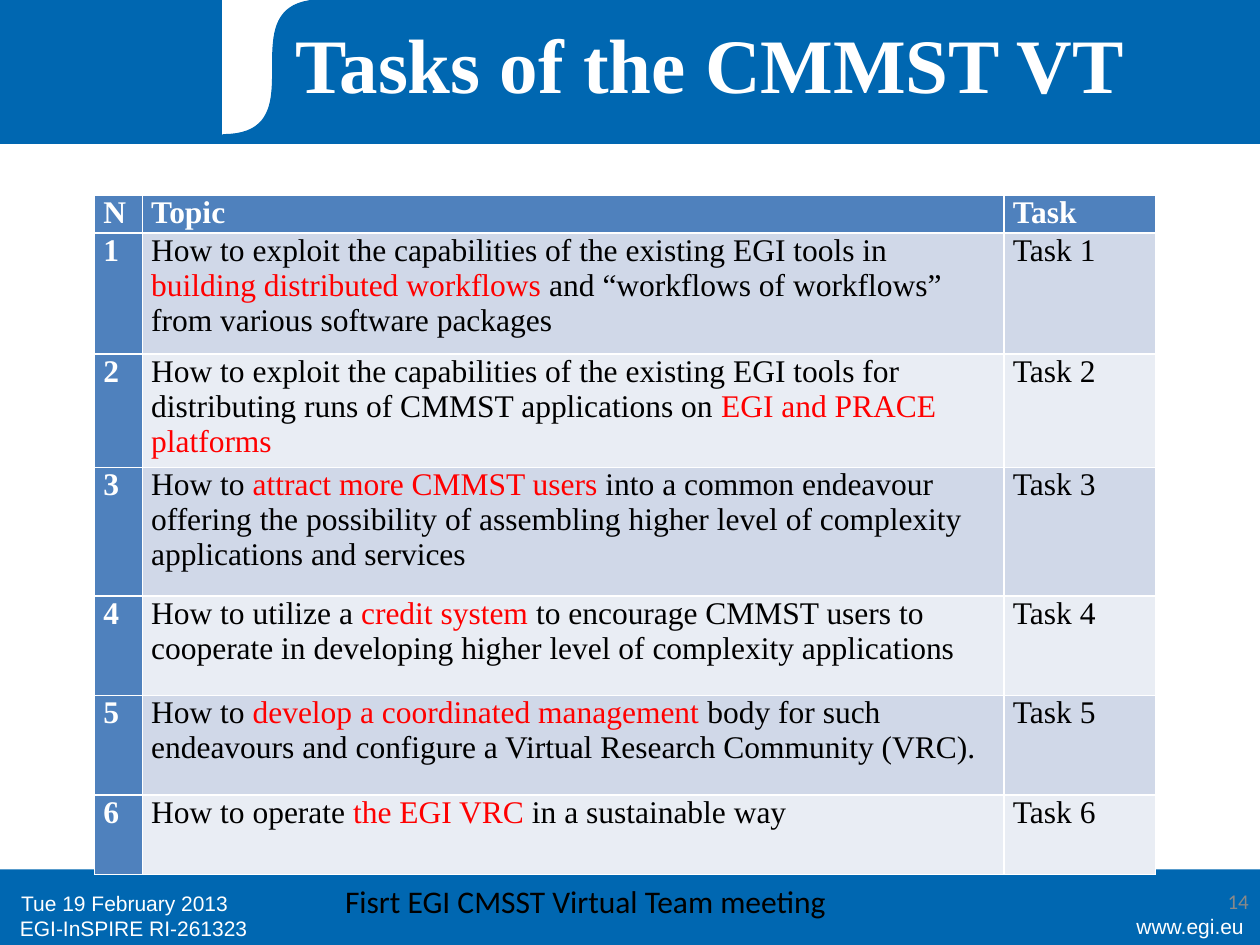
"""Build the slide listing the tasks of the CMMST virtual team."""
from lxml.etree import SubElement
from pptx import Presentation
from pptx.dml.color import RGBColor
from pptx.enum.shapes import MSO_SHAPE
from pptx.enum.text import MSO_ANCHOR, PP_ALIGN
from pptx.oxml.ns import qn
from pptx.util import Inches, Pt

COLORS = {
    "band": "0067B1", "white": "FFFFFF", "black": "000000", "red": "FF0000",
    "header": "4F81BD", "odd": "D0D8E8", "even": "E9EDF4", "number": "898989",
}
SERIF = "Times New Roman"

presentation = Presentation()
presentation.slide_width = Inches(10)
presentation.slide_height = Inches(7.5)
slide = presentation.slides.add_slide(presentation.slide_layouts[6])
COLUMN = presentation.slide_width / 100
ROW = presentation.slide_height / 100


def add_run(paragraph, text, font, size, color, bold=False):
    run = paragraph.add_run()
    run.text = text
    run.font.name = font
    run.font.size = Pt(size)
    run.font.bold = bold
    run.font.color.rgb = RGBColor.from_string(COLORS[color])


def paint(shape, color, outlined=True):
    shape.shadow.inherit = False
    shape.fill.solid()
    shape.fill.fore_color.rgb = RGBColor.from_string(COLORS[color])
    if outlined:
        shape.line.color.rgb = RGBColor.from_string(COLORS[color])
        shape.line.width = Pt(0.75)
    else:
        shape.line.fill.background()


bands = [
    (0, 92, 100, 8, "band", False),
    (0, 0, 100, 15.2, "band", True),
    (17.7, 0, 19.7, 14.27, "white", True),
]
for left, top, width, height, color, outlined in bands:
    band = slide.shapes.add_shape(
        MSO_SHAPE.RECTANGLE, int(left * COLUMN), int(top * ROW), int(width * COLUMN), int(height * ROW))
    paint(band, color, outlined)

curve_left, curve_right, swoosh_right, swoosh_bottom = 17.7, 25.6, 37.4, 14.27
steps = 40
curve = []
for step in range(steps + 1):
    t = step / steps
    progress = 3 * t * (1 - t) ** 2 + t ** 3
    rise = 3 * t ** 2 * (1 - t) + t ** 3
    curve.append((
        int((curve_left + (curve_right - curve_left) * progress) * COLUMN),
        int(swoosh_bottom * (1 - rise) * ROW),
    ))
builder = slide.shapes.build_freeform(int(swoosh_right * COLUMN), 0)
builder.add_line_segments([(int(swoosh_right * COLUMN), int(swoosh_bottom * ROW))] + curve, close=True)
paint(builder.convert_to_shape(), "band")

labels = [
    (83.9, 96, 15.8, 4.13, "www.egi.eu", "Arial", 12, "white", False, PP_ALIGN.RIGHT, MSO_ANCHOR.TOP),
    (0.6, 96.27, 25, 4.13, "EGI-InSPIRE RI-261323", "Arial", 12, "white", False, PP_ALIGN.LEFT, MSO_ANCHOR.TOP),
    (21.7, 0, 69.3, 13.2, "Tasks of the CMMST VT", SERIF, 44, "white", True, PP_ALIGN.CENTER, MSO_ANCHOR.MIDDLE),
    (76.8, 92.67, 23.3, 5.33, "14", "Calibri", 12, "number", False, PP_ALIGN.RIGHT, MSO_ANCHOR.MIDDLE),
    (0.7, 92.93, 23.3, 5.33, "Tue 19 February 2013", "Arial", 12, "white", False, PP_ALIGN.LEFT, MSO_ANCHOR.MIDDLE),
    (26.4, 92.67, 56.7, 5.33, "Fisrt EGI CMSST Virtual Team meeting", "Calibri", 18, "black", False,
     PP_ALIGN.LEFT, MSO_ANCHOR.TOP),
]
for left, top, width, height, text, font, size, color, bold, alignment, anchor in labels:
    box = slide.shapes.add_textbox(int(left * COLUMN), int(top * ROW), int(width * COLUMN), int(height * ROW))
    box.text_frame.word_wrap = True
    box.text_frame.vertical_anchor = anchor
    paragraph = box.text_frame.paragraphs[0]
    paragraph.alignment = alignment
    add_run(paragraph, text, font, size, color, bold)

topics = [
    ("How to exploit the capabilities of the existing EGI tools in ", "building distributed workflows ",
     "and “workflows of workflows” from various software packages"),
    ("How to exploit the capabilities of the existing EGI tools for distributing runs of CMMST applications on ",
     "EGI and PRACE platforms"),
    ("How to ", "attract more CMMST users ",
     "into a common endeavour offering the possibility of assembling higher level of complexity "
     "applications and services"),
    ("How to utilize a ", "credit system ",
     "to encourage CMMST users to cooperate in developing higher level of complexity applications"),
    ("How to ", "develop a coordinated management ",
     "body for such endeavours and configure a Virtual Research Community (VRC)."),
    ("How to operate ", "the EGI VRC ", "in a sustainable way"),
]
table_rows = [(("N",), ("Topic",), ("Task",))]
for number, topic in enumerate(topics, 1):
    table_rows.append(((str(number),), topic, (f"Task {number}",)))

column_widths = [3.8, 68.4, 12]
row_heights = [4, 12.8, 12, 13.6, 10.53, 10.53, 8.4]
table = slide.shapes.add_table(
    len(row_heights), len(column_widths), int(7.5 * COLUMN), int(20.67 * ROW),
    int(sum(column_widths) * COLUMN), int(sum(row_heights) * ROW)).table
table.first_col = True
for table_column, width in zip(table.columns, column_widths):
    table_column.width = int(width * COLUMN)
for table_row, height in zip(table.rows, row_heights):
    table_row.height = int(height * ROW)

for row_index, row_cells in enumerate(table_rows):
    for column_index, parts in enumerate(row_cells):
        cell = table.cell(row_index, column_index)
        heading = row_index == 0 or column_index == 0
        fill = "header" if heading else ("odd" if row_index % 2 else "even")
        cell.fill.solid()
        cell.fill.fore_color.rgb = RGBColor.from_string(COLORS[fill])
        cell.margin_left = cell.margin_right = Inches(0.07)
        cell.margin_top = cell.margin_bottom = 0
        properties = cell._tc.get_or_add_tcPr()
        for position, side in enumerate(("lnL", "lnR", "lnT", "lnB")):
            border = SubElement(properties, qn(f"a:{side}"), w=str(Pt(1)))
            SubElement(SubElement(border, qn("a:solidFill")), qn("a:srgbClr"), val=COLORS["white"])
            properties.insert(position, border)
        paragraph = cell.text_frame.paragraphs[0]
        if len(parts) == 1:
            paragraph.space_after = Pt(6)
        for part_index, part in enumerate(parts):
            color = "white" if heading else ("red" if part_index == 1 else "black")
            add_run(paragraph, part, SERIF, 18, color, heading)

presentation.save("out.pptx")
